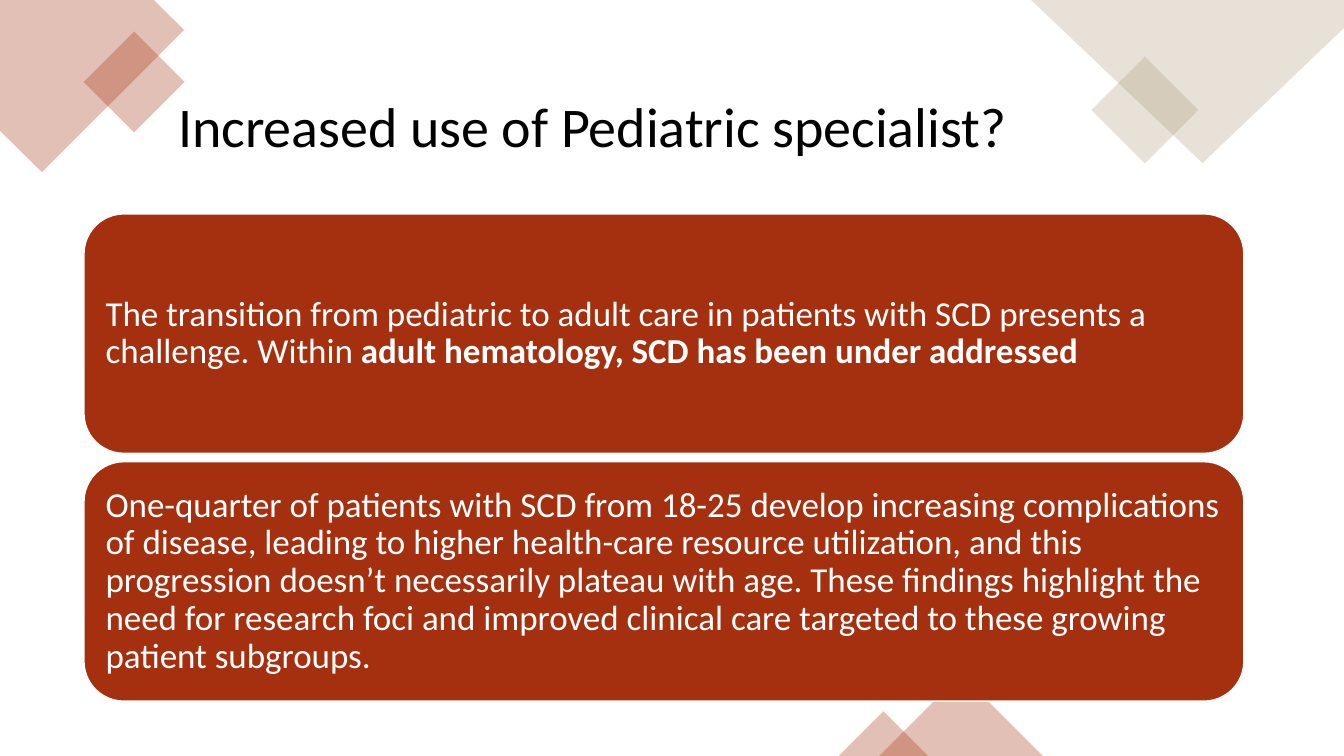
"""Build a slide on paediatric specialist use: a title, two statement cards and corner ornaments."""
import pptx
import pptx.util
import pptx.dml.color
import pptx.enum.shapes
import pptx.enum.text
import pptx.oxml

Pt = pptx.util.Pt
SHAPES = pptx.enum.shapes.MSO_SHAPE
ALIGN = pptx.enum.text.PP_ALIGN
ANCHOR = pptx.enum.text.MSO_ANCHOR

COLORS = {"rust": "A5300F", "sand": "B19C7D", "white": "FFFFFF", "black": "000000"}
FONT = "Calibri"

TITLE = "Increased use of Pediatric specialist?"
CARDS = [
    [
        ("The transition from pediatric to adult care in patients with SCD presents a "
         "challenge. Within ", False),
        ("adult hematology, SCD has been under addressed", True),
    ],
    [
        ("One-quarter of patients with SCD from 18-25 develop increasing complications "
         "of disease, leading to higher health-care resource utilization, and this "
         "progression doesn’t necessarily plateau with age. These findings highlight "
         "the need for research foci and improved clinical care targeted to these "
         "growing patient subgroups.", False),
    ],
]

CORNERS = [
    ("rust", [(0, 0), (110, 0), (131.5, 21.5), (30, 123), (0, 93.5)]),
    ("sand", [(736.5, 0), (960, 0), (960, 20), (859, 116.5)]),
]
ORNAMENTS = [
    ("rust", SHAPES.RECTANGLE, (70.3, 33, 51, 51), 315),
    ("sand", SHAPES.RECTANGLE, (790.8, 51.6, 54, 54), 315),
    ("rust", SHAPES.ISOSCELES_TRIANGLE, (628, 481.5, 117, 58.5), 0),
    ("rust", SHAPES.ISOSCELES_TRIANGLE, (599, 508, 64, 32), 0),
]
OPACITY = 30

TITLE_BOX = (120, 46, 800.5, 93)
CARD_LEFT, CARD_TOP, CARD_WIDTH, CARD_HEIGHT = 60, 152.8, 828.5, 171
CARD_GAP = 6
INSET = 7.2


def rgb(name):
    """Return the named colour."""
    return pptx.dml.color.RGBColor.from_string(COLORS[name])


def points(values):
    """Convert numbers to lengths in points."""
    return [Pt(value) for value in values]


def paint(shape, color, opacity=100):
    """Fill a shape, without outline or shadow."""
    shape.shadow.inherit = False
    shape.line.fill.background()
    shape.fill.solid()
    shape.fill.fore_color.rgb = rgb(color)
    if opacity < 100:
        tint = shape.fill._xPr.find(".//" + pptx.oxml.ns.qn("a:srgbClr"))
        alpha = pptx.oxml.parse_xml(
            f'<a:alpha {pptx.oxml.ns.nsdecls("a")} val="{opacity * 1000}"/>')
        tint.append(alpha)


def write(frame, spans, size, color):
    """Write one left-aligned paragraph of (text, bold) spans."""
    frame.word_wrap = True
    frame.auto_size = pptx.enum.text.MSO_AUTO_SIZE.NONE
    frame.vertical_anchor = ANCHOR.MIDDLE
    para = frame.paragraphs[0]
    para.alignment = ALIGN.LEFT
    para.line_spacing = 0.9
    for text, bold in spans:
        span = para.add_run()
        span.text = text
        span.font.name = FONT
        span.font.size = Pt(size)
        span.font.bold = bold
        span.font.color.rgb = rgb(color)


def add_ornaments(page):
    """Draw the translucent corner and edge shapes."""
    for color, corners in CORNERS:
        start, *rest = [points(corner) for corner in corners]
        builder = page.shapes.build_freeform(*start)
        builder.add_line_segments(rest, close=True)
        paint(builder.convert_to_shape(), color, OPACITY)
    for color, kind, place, rotation in ORNAMENTS:
        shape = page.shapes.add_shape(kind, *points(place))
        shape.rotation = rotation
        paint(shape, color, OPACITY)


def add_title(page):
    """Place and format the title."""
    title = page.shapes.title
    title.left, title.top, title.width, title.height = points(TITLE_BOX)
    write(title.text_frame, [(TITLE, False)], 40, "black")


def add_cards(page):
    """Stack the statement cards."""
    for index, spans in enumerate(CARDS):
        top = CARD_TOP + index * (CARD_HEIGHT + CARD_GAP)
        card = page.shapes.add_shape(
            SHAPES.ROUNDED_RECTANGLE, *points((CARD_LEFT, top, CARD_WIDTH, CARD_HEIGHT)))
        paint(card, "rust")
        card.line.color.rgb = rgb("white")
        card.line.width = Pt(1)
        frame = card.text_frame
        frame.margin_left = frame.margin_right = Pt(INSET)
        frame.margin_top = frame.margin_bottom = Pt(INSET)
        write(frame, spans, 25, "white")


def main():
    """Build and save the deck."""
    deck = pptx.Presentation()
    deck.slide_width, deck.slide_height = Pt(960), Pt(540)
    page = deck.slides.add_slide(deck.slide_layouts[5])
    add_ornaments(page)
    add_title(page)
    add_cards(page)
    deck.save("out.pptx")


if __name__ == "__main__":
    main()
